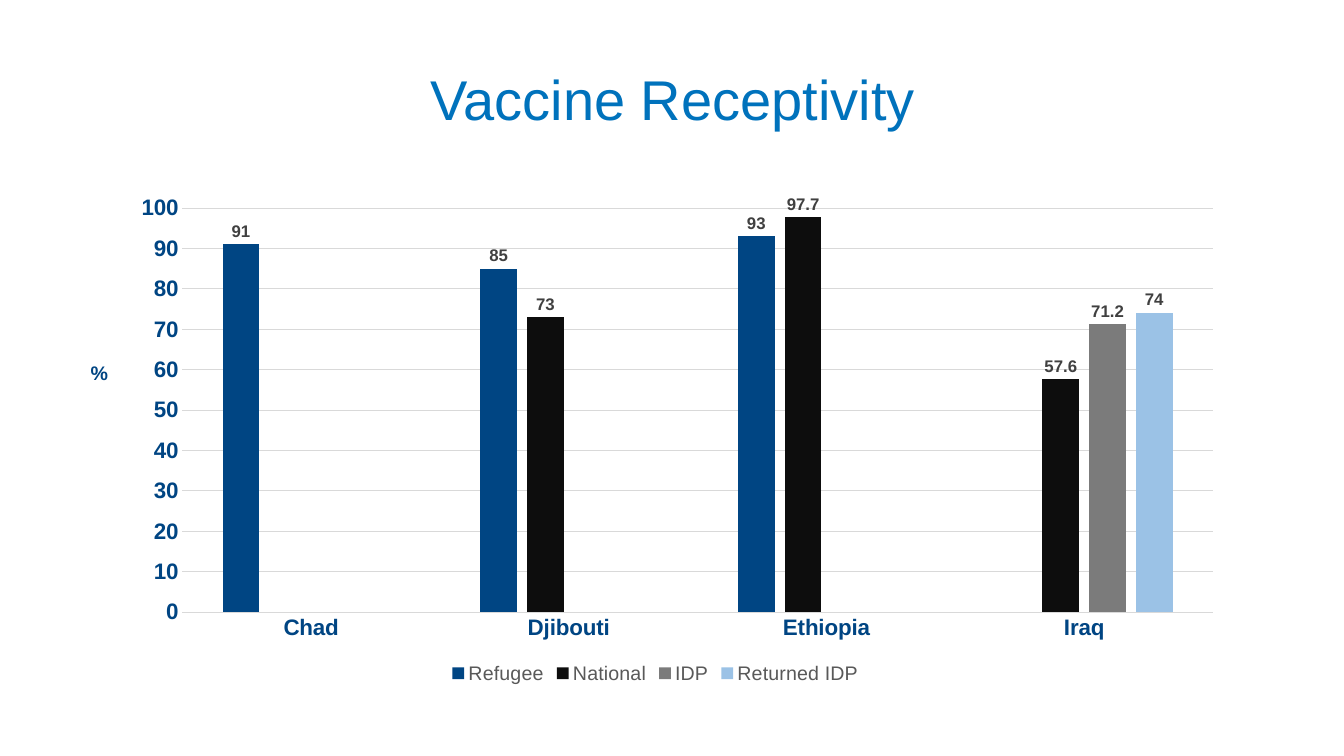
from dataclasses import dataclass
from typing import Any, Optional

import lxml.etree
import pptx
import pptx.chart.data
import pptx.dml.color
import pptx.enum.chart
import pptx.enum.text
import pptx.oxml.ns
import pptx.util

Inches = pptx.util.Inches
Pt = pptx.util.Pt
RGBColor = pptx.dml.color.RGBColor
enums = pptx.enum.chart
qn = pptx.oxml.ns.qn

BLUE = RGBColor(0x00, 0x72, 0xBC)
NAVY = RGBColor(0x00, 0x45, 0x83)
BLACK = RGBColor(0x0D, 0x0D, 0x0D)
GREY = RGBColor(0x7B, 0x7B, 0x7B)
SKY = RGBColor(0x9B, 0xC2, 0xE6)
DARK = RGBColor(0x40, 0x40, 0x40)
MID = RGBColor(0x59, 0x59, 0x59)
PALE = RGBColor(0xD9, 0xD9, 0xD9)


@dataclass
class Group:
    name: str
    color: RGBColor
    rates: list[Optional[float]]


NATIONS = ["Chad", "Djibouti", "Ethiopia", "Iraq"]
GROUPS = [
    Group("Refugee", NAVY, [91, 85, 93, None]),
    Group("National", BLACK, [None, 73, 97.7, 57.6]),
    Group("IDP", GREY, [None, None, None, 71.2]),
    Group("Returned IDP", SKY, [None, None, None, 74]),
]


def assign(target: Any, values: dict[str, Any]) -> None:
    for name, value in values.items():
        setattr(target, name, value)


def style(font: Any, size: float, color: RGBColor, bold: bool = False) -> None:
    assign(font, {"name": "Arial", "size": Pt(size), "bold": bold})
    font.color.rgb = color


def rule(line: Any) -> None:
    line.color.rgb = PALE
    line.width = Pt(0.75)


def place(parent: Any, index: int, values: dict[str, Any]) -> None:
    """Give a chart part a manual layout, in fractions of the chart."""
    for old in parent.findall(qn("c:layout")):
        parent.remove(old)
    layout = lxml.etree.Element(qn("c:layout"))
    manual = lxml.etree.SubElement(layout, qn("c:manualLayout"))
    for name, value in values.items():
        lxml.etree.SubElement(manual, qn(f"c:{name}")).set("val", str(value))
    parent.insert(index, layout)


def add_title(slide: Any) -> None:
    box = slide.shapes.add_textbox(Inches(0.92), Inches(0.4), Inches(11.5), Inches(1.23))
    frame = box.text_frame
    assign(frame, {"word_wrap": True, "vertical_anchor": pptx.enum.text.MSO_ANCHOR.MIDDLE})
    para = frame.paragraphs[0]
    assign(para, {"text": "Vaccine Receptivity", "line_spacing": 0.9,
                  "alignment": pptx.enum.text.PP_ALIGN.CENTER})
    style(para.font, 40, BLUE)


def add_bars(slide: Any) -> Any:
    data = pptx.chart.data.CategoryChartData()
    data.categories = NATIONS
    for group in GROUPS:
        data.add_series(group.name, group.rates)
    chart = slide.shapes.add_chart(
        enums.XL_CHART_TYPE.COLUMN_CLUSTERED,
        Inches(0.75), Inches(1.85), Inches(11.5), Inches(4.98), data).chart
    assign(chart, {"has_title": False, "has_legend": True})
    assign(chart.font, {"name": "Arial", "size": Pt(10)})

    # Bars and their values
    plot = chart.plots[0]
    assign(plot, {"gap_width": 219, "overlap": -27, "vary_by_categories": False})
    for group, bars in zip(GROUPS, plot.series):
        bars.invert_if_negative = False
        bars.format.fill.solid()
        bars.format.fill.fore_color.rgb = group.color
        labels = bars.data_labels
        assign(labels, {"show_value": True,
                        "position": enums.XL_LABEL_POSITION.OUTSIDE_END})
        style(labels.font, 12, DARK, True)

    # Legend
    legend = chart.legend
    assign(legend, {"position": enums.XL_LEGEND_POSITION.BOTTOM, "include_in_layout": False})
    style(legend.font, 14, MID)
    return chart


def set_axes(chart: Any) -> None:
    none = enums.XL_TICK_MARK.NONE
    for axis in (chart.category_axis, chart.value_axis):
        assign(axis, {"major_tick_mark": none, "minor_tick_mark": none})
        style(axis.tick_labels.font, 16, NAVY, True)
    rule(chart.category_axis.format.line)

    rates = chart.value_axis
    assign(rates, {"minimum_scale": 0, "maximum_scale": 100, "major_unit": 10,
                   "has_major_gridlines": True})
    rule(rates.major_gridlines.format.line)
    rates.format.line.fill.background()

    # Upright axis title
    title = rates.axis_title
    frame = title.text_frame
    frame.text = "%"
    frame._txBody.bodyPr.set("rot", "0")
    style(frame.paragraphs[0].runs[0].font, 14, NAVY, True)
    place(title._element, 1, {"xMode": "edge", "yMode": "edge", "x": 0.01, "y": 0.34})

    # Plot area
    area = chart._chartSpace.chart.plotArea
    place(area, 0, {"layoutTarget": "inner", "xMode": "edge", "yMode": "edge",
                    "x": 0.092, "y": 0.043, "w": 0.889, "h": 0.805})


def main() -> None:
    deck = pptx.Presentation()
    assign(deck, {"slide_width": Inches(13.33), "slide_height": Inches(7.5)})
    slide = deck.slides.add_slide(deck.slide_layouts[6])
    add_title(slide)
    set_axes(add_bars(slide))
    deck.save("out.pptx")


if __name__ == "__main__":
    main()
